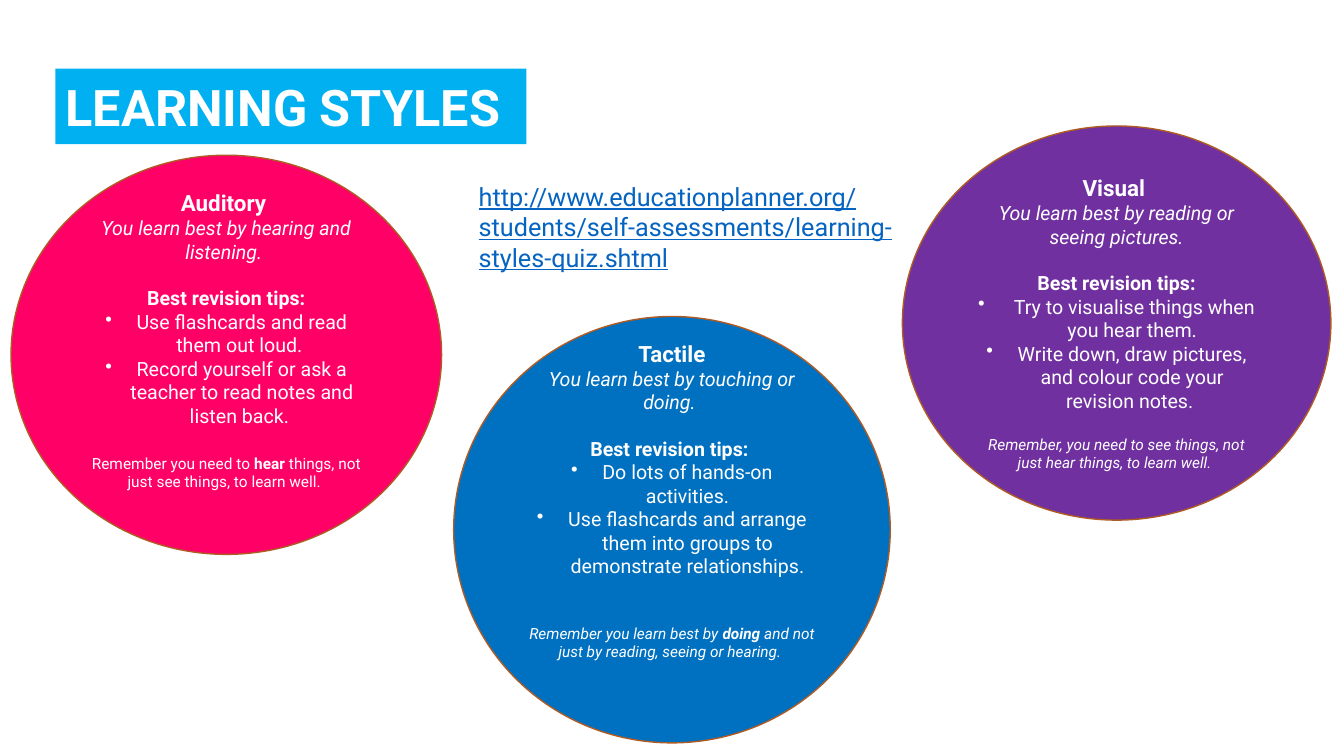
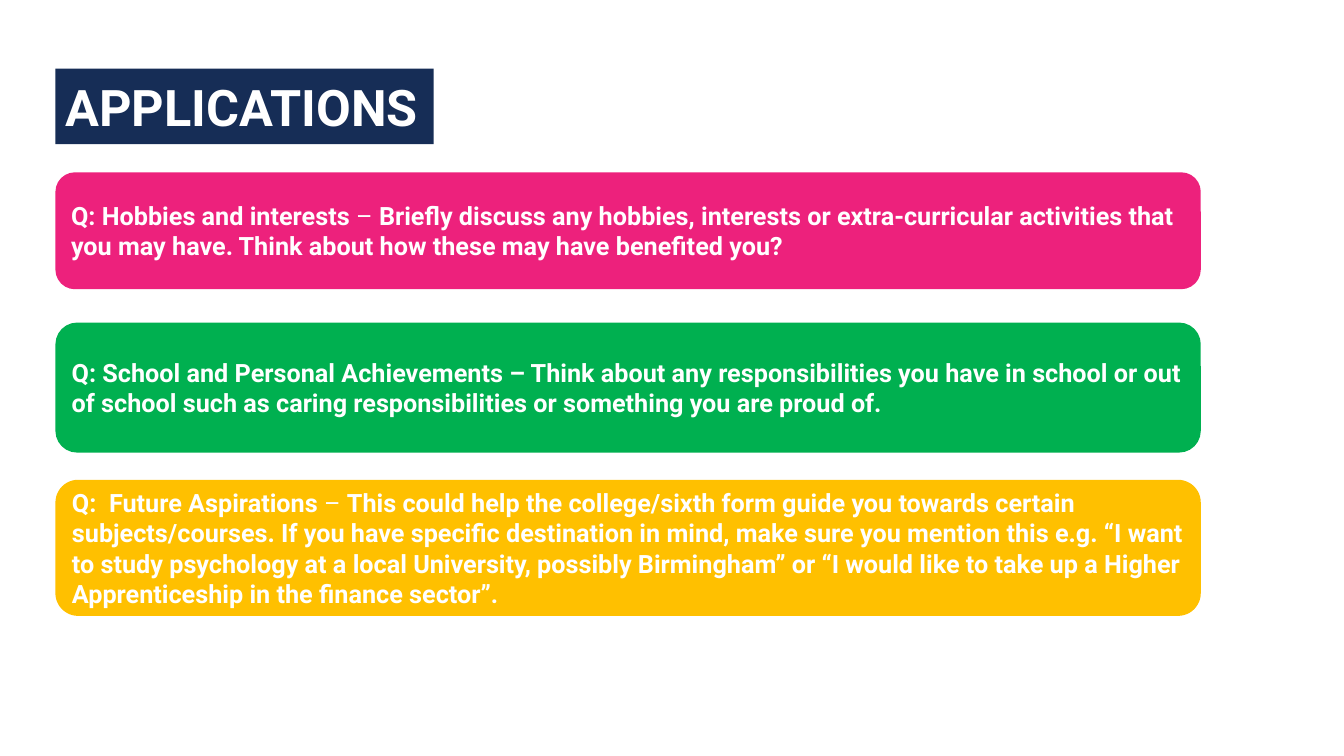
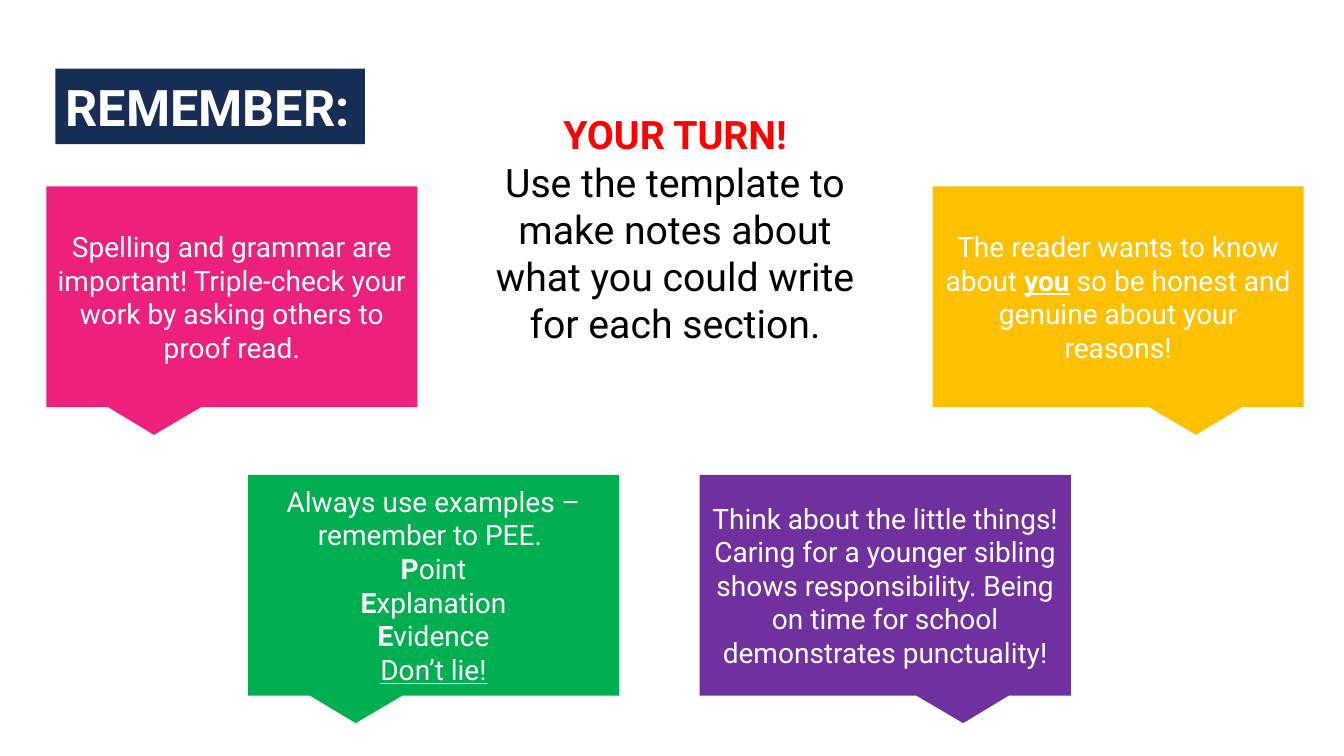
"""Build three slides on learning styles, applications and reminders."""
from dataclasses import dataclass

import lxml.etree
import pptx
import pptx.dml.color
import pptx.enum.shapes
import pptx.enum.text
import pptx.oxml.ns
import pptx.presentation
import pptx.shapes.autoshape
import pptx.slide
import pptx.text.text
import pptx.util

Inches = pptx.util.Inches
Pt = pptx.util.Pt
RGBColor = pptx.dml.color.RGBColor
Shape = pptx.enum.shapes.MSO_SHAPE
Align = pptx.enum.text.PP_ALIGN
Anchor = pptx.enum.text.MSO_ANCHOR
AutoSize = pptx.enum.text.MSO_AUTO_SIZE

FONT = "Roboto"
WHITE = RGBColor(0xFF, 0xFF, 0xFF)
BLACK = RGBColor(0x00, 0x00, 0x00)
RED = RGBColor(0xFF, 0x00, 0x00)
NAVY = RGBColor(0x16, 0x2D, 0x56)
SKY = RGBColor(0x00, 0xB0, 0xF0)
BLUE = RGBColor(0x00, 0x70, 0xC0)
LINK_BLUE = RGBColor(0x05, 0x63, 0xC1)
ROSE = RGBColor(0xFF, 0x00, 0x66)
PINK = RGBColor(0xED, 0x21, 0x7C)
GREEN = RGBColor(0x00, 0xB0, 0x50)
AMBER = RGBColor(0xFF, 0xC0, 0x00)
PURPLE = RGBColor(0x70, 0x30, 0xA0)
BROWN = RGBColor(0xAF, 0x5C, 0x24)

LINE_HEIGHT = 1.17
BULLET_INDENT = Inches(0.31)
CALLOUT_SIZE = (3.68, 2.19)
CALLOUT_TIP = 0.21


@dataclass(frozen=True)
class Run:
    text: str
    bold: bool = False
    italic: bool = False
    underline: bool = False


@dataclass(frozen=True)
class Para:
    runs: tuple[Run, ...]
    size: float
    color: RGBColor = WHITE
    bullet: bool = False
    gap: float = 0


@dataclass(frozen=True)
class LearningStyle:
    box: tuple[float, float, float, float]
    fill: RGBColor
    name: str
    summary: str
    tips_heading: str
    tips: tuple[str, ...]
    reminder: tuple[Run, ...]
    reminder_gap: float
    lift: float = 0


@dataclass(frozen=True)
class Question:
    top: float
    height: float
    fill: RGBColor
    runs: tuple[Run, ...]


@dataclass(frozen=True)
class Reminder:
    left: float
    top: float
    fill: RGBColor
    tip_side: int
    lines: tuple[tuple[Run, ...], ...]


LEARNING_STYLES = (
    LearningStyle(
        (0.11, 1.54, 4.27, 3.96), ROSE, "Auditory ",
        "You learn best by hearing and listening. ", "Best revision tips:",
        ("Use flashcards and read them out loud. ",
         "Record yourself or ask a teacher to read notes and listen back. "),
        (Run("Remember you need to "), Run("hear", bold=True),
         Run(" things, not just see things, to learn well. ")),
        reminder_gap=16, lift=18),
    LearningStyle(
        (4.5, 3.14, 4.33, 4.23), BLUE, "Tactile",
        "You learn best by touching or doing. ", "Best revision tips: ",
        ("Do lots of hands-on activities.",
         "Use flashcards and arrange them into groups to demonstrate relationships."),
        (Run("Remember you learn best by", italic=True),
         Run(" doing ", bold=True, italic=True),
         Run("and not just by reading, seeing or hearing. ", italic=True)),
        reminder_gap=28, lift=36),
    LearningStyle(
        (8.95, 1.25, 4.25, 3.91), PURPLE, "Visual ",
        "You learn best by reading or seeing pictures.", "Best revision tips:",
        (" Try to visualise things when you hear them.",
         "Write down, draw pictures, and colour code your revision notes. "),
        (Run("Remember, you need to see things, not just hear things, to learn well. ",
             italic=True),),
        reminder_gap=14),
)

QUESTIONS = (
    Question(1.71, 1.16, PINK, (
        Run("Q: Hobbies and interests ", bold=True), Run("– "),
        Run("Briefly discuss any hobbies, interests or extra-curricular activities that "
            "you may have. Think about how these may have benefited you?", bold=True))),
    Question(3.2, 1.29, GREEN, (
        Run("Q: School and Personal Achievements – Think about any responsibilities you "
            "have in school or out of school such as caring responsibilities or something "
            "you are proud of.", bold=True),)),
    Question(4.76, 1.35, AMBER, (
        Run("Q:  Future Aspirations", bold=True), Run(" – "),
        Run("This could help the college/sixth form guide you towards certain "
            "subjects/courses. If you have specific destination in mind, make sure you "
            "mention this e.g. “I want to study psychology at a local University, possibly "
            "Birmingham” or “I would like to take up a Higher Apprenticeship in the "
            "finance sector”.", bold=True))),
)

REMINDERS = (
    Reminder(0.46, 1.85, PINK, -1, (
        (Run("Spelling and grammar are important! Triple-check your work by asking "
             "others to proof read."),),)),
    Reminder(2.46, 4.71, GREEN, -1, (
        (Run("Always use examples – remember to PEE. "),),
        (Run("P", bold=True), Run("oint")),
        (Run("E", bold=True), Run("xplanation")),
        (Run("E", bold=True), Run("vidence")),
        (Run("Don’t lie!", underline=True),))),
    Reminder(9.25, 1.85, AMBER, 1, (
        (Run("The reader wants to know about "), Run("you", bold=True, underline=True),
         Run(" so be honest and genuine about your reasons!")),)),
    Reminder(6.94, 4.71, PURPLE, 1, (
        (Run("Think about the little things! Caring for a younger sibling shows "
             "responsibility. Being on time for school demonstrates punctuality!"),),)),
)


def add_bullet(paragraph: pptx.text.text._Paragraph) -> None:
    """Give a paragraph a hanging bullet."""
    properties = paragraph._p.get_or_add_pPr()
    properties.set("marL", str(BULLET_INDENT))
    properties.set("indent", str(-BULLET_INDENT))
    bullet = lxml.etree.SubElement(properties, pptx.oxml.ns.qn("a:buChar"))
    bullet.set("char", "•")


def write(frame: pptx.text.text.TextFrame, paras: tuple[Para, ...], *,
          align: Align = Align.LEFT, anchor: Anchor = Anchor.MIDDLE,
          auto_size: AutoSize = AutoSize.NONE) -> None:
    """Fill a text frame with formatted paragraphs."""
    frame.word_wrap = True
    frame.auto_size = auto_size
    frame.vertical_anchor = anchor
    for index, para in enumerate(paras):
        paragraph = frame.add_paragraph() if index else frame.paragraphs[0]
        if para.bullet:
            add_bullet(paragraph)
        paragraph.alignment = align
        if para.gap:
            paragraph.space_before = Pt(round(para.gap * LINE_HEIGHT, 1))
        for part in para.runs:
            run = paragraph.add_run()
            run.text = part.text
            run.font.name = FONT
            run.font.size = Pt(para.size)
            run.font.color.rgb = para.color
            run.font.bold = part.bold
            run.font.italic = part.italic
            run.font.underline = part.underline


def add_panel(slide: pptx.slide.Slide, kind: Shape,
              box: tuple[float, float, float, float],
              fill: RGBColor) -> pptx.shapes.autoshape.Shape:
    """Add a filled shape with no shadow or outline."""
    panel = slide.shapes.add_shape(kind, *map(Inches, box))
    panel.shadow.inherit = False
    panel.fill.solid()
    panel.fill.fore_color.rgb = fill
    panel.line.fill.background()
    return panel


def add_titled_slide(deck: pptx.presentation.Presentation, heading: str,
                     width: float, fill: RGBColor) -> pptx.slide.Slide:
    """Add a slide whose title sits on a coloured band."""
    slide = deck.slides.add_slide(deck.slide_layouts[5])
    title = slide.shapes.title
    title.left, title.top, title.width, title.height = map(
        Inches, (0.55, 0.68, width, 0.75))
    title.fill.solid()
    title.fill.fore_color.rgb = fill
    write(title.text_frame, (Para((Run(heading, bold=True),), 36),))
    return slide


def add_note(slide: pptx.slide.Slide, box: tuple[float, float, float, float],
             paras: tuple[Para, ...], align: Align = Align.LEFT) -> None:
    """Add free-standing text."""
    note = slide.shapes.add_textbox(*map(Inches, box))
    write(note.text_frame, paras, align=align, anchor=Anchor.TOP,
          auto_size=AutoSize.SHAPE_TO_FIT_TEXT)


def add_learning_style(slide: pptx.slide.Slide, style: LearningStyle) -> None:
    """Draw one learning style as an outlined ellipse."""
    ellipse = add_panel(slide, Shape.OVAL, style.box, style.fill)
    ellipse.line.color.rgb = BROWN
    ellipse.line.width = Pt(1)
    ellipse.text_frame.margin_bottom = Inches(0.05) + Pt(style.lift * LINE_HEIGHT)
    write(ellipse.text_frame, (
        Para((Run(style.name, bold=True),), 16),
        Para((Run(style.summary, italic=True),), 14),
        Para((Run(style.tips_heading, bold=True),), 14, gap=14),
        *(Para((Run(tip),), 14, bullet=True) for tip in style.tips),
        Para(style.reminder, 11, gap=style.reminder_gap),
    ), align=Align.CENTER)


def add_question(slide: pptx.slide.Slide, question: Question) -> None:
    """Draw one application question as a rounded bar."""
    bar = add_panel(slide, Shape.ROUNDED_RECTANGLE,
                    (0.55, question.top, 11.36, question.height), question.fill)
    write(bar.text_frame, (Para(question.runs, 18),))


def add_reminder(slide: pptx.slide.Slide, reminder: Reminder) -> None:
    """Draw one reminder as a speech callout."""
    callout = add_panel(slide, Shape.RECTANGULAR_CALLOUT,
                        (reminder.left, reminder.top, *CALLOUT_SIZE), reminder.fill)
    callout.adjustments[0] = reminder.tip_side * CALLOUT_TIP
    write(callout.text_frame, tuple(Para(line, 20) for line in reminder.lines),
          align=Align.CENTER)


def main() -> None:
    """Build and save the presentation."""
    deck = pptx.Presentation()
    deck.slide_width, deck.slide_height = Inches(13.33), Inches(7.5)

    styles_slide = add_titled_slide(deck, "LEARNING STYLES", 4.67, SKY)
    for style in LEARNING_STYLES:
        add_learning_style(styles_slide, style)
    quiz_address = Run("http://www.educationplanner.org/students/self-assessments/"
                       "learning-styles-quiz.shtml", underline=True)
    add_note(styles_slide, (4.65, 1.75, 4.3, 1.01),
             (Para((quiz_address,), 18, LINK_BLUE),))

    applications_slide = add_titled_slide(deck, "APPLICATIONS", 3.75, NAVY)
    for question in QUESTIONS:
        add_question(applications_slide, question)

    remember_slide = add_titled_slide(deck, "REMEMBER:", 3.07, NAVY)
    for reminder in REMINDERS:
        add_reminder(remember_slide, reminder)
    add_note(remember_slide, (4.78, 1.05, 3.83, 2.46), (
        Para((Run("YOUR TURN!", bold=True),), 28, RED),
        Para((Run("Use the template to make notes about what you could write for "
                  "each section."),), 28, BLACK),
    ), Align.CENTER)

    deck.save("out.pptx")


if __name__ == "__main__":
    main()
